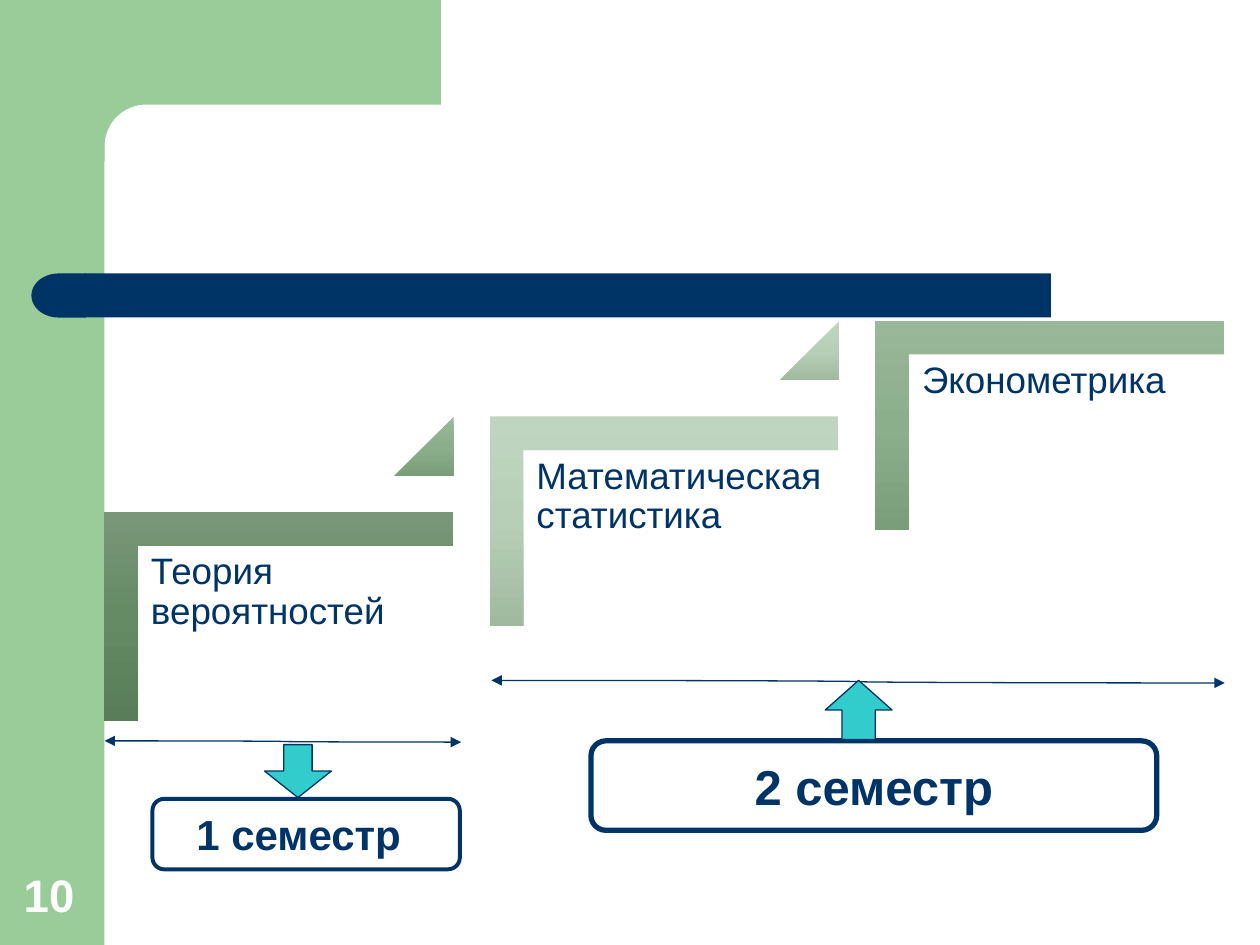
from math import cos, pi, sin

from lxml import etree
from pptx import Presentation
from pptx.dml.color import RGBColor
from pptx.enum.shapes import MSO_CONNECTOR, MSO_SHAPE
from pptx.enum.text import MSO_ANCHOR, PP_ALIGN
from pptx.oxml.ns import qn
from pptx.util import Inches, Pt

RECT, ROUND = MSO_SHAPE.RECTANGLE, MSO_SHAPE.ROUNDED_RECTANGLE
DELAY, CORNER = MSO_SHAPE.FLOWCHART_DELAY, MSO_SHAPE.CORNER
TRIANGLE = MSO_SHAPE.ISOSCELES_TRIANGLE
UP, DOWN = MSO_SHAPE.UP_ARROW, MSO_SHAPE.DOWN_ARROW
CURVE = MSO_CONNECTOR.CURVE
TOP, MIDDLE, BOTTOM = MSO_ANCHOR.TOP, MSO_ANCHOR.MIDDLE, MSO_ANCHOR.BOTTOM
LEFT, CENTER = PP_ALIGN.LEFT, PP_ALIGN.CENTER

NAVY, GREEN, TEAL, WHITE = "003366", "99CC99", "33CCCC", "FFFFFF"
DARK = ("799679", "648B64", "587D58")
MEDIUM = ("99B799", "8BAF8B", "799E79")
LIGHT = ("C0D5C0", "B6CFB6", "A0BAA0")

# Step caption, gradient of its corner, gradient of the triangle after it
STEPS = [
    ("Теория вероятностей", DARK, MEDIUM),
    ("Математическая статистика", LIGHT, LIGHT),
    ("Эконометрика", MEDIUM, None),
]
STEP_X, STEP_Y = 3.06, -0.76


def rgb(value):
    return RGBColor.from_string(value)


def paint(sp, fill, line=None, width=0.75):
    """Solid fill for a hex string, downward gradient for a tuple of them."""
    sp.shadow.inherit = False
    if isinstance(fill, str):
        sp.fill.solid()
        sp.fill.fore_color.rgb = rgb(fill)
    else:
        sp.fill.gradient()
        sp.fill.gradient_angle = 270
        grad = sp._element.spPr.find(qn("a:gradFill"))
        grad.set("rotWithShape", "0")
        stops = grad.find(qn("a:gsLst"))
        for stop in list(stops):
            stops.remove(stop)
        for i, value in enumerate(fill):
            stop = etree.SubElement(stops, qn("a:gs"), pos=str(i * 50000))
            etree.SubElement(stop, qn("a:srgbClr"), val=value)
    if line:
        sp.line.color.rgb = rgb(line)
        sp.line.width = Pt(width)
    else:
        sp.line.fill.background()


def add_shape(s, kind, x, y, w, h, fill, adj=(), rotation=0, **line):
    sp = s.shapes.add_shape(kind, Inches(x), Inches(y), Inches(w), Inches(h))
    for i, value in enumerate(adj):
        sp.adjustments[i] = value
    sp.rotation = rotation
    paint(sp, fill, **line)
    return sp


def set_text(sp, text, size, color=NAVY, bold=False, align=LEFT, anchor=TOP,
             spacing=None):
    tf = sp.text_frame
    tf.word_wrap = True
    tf.vertical_anchor = anchor
    p = tf.paragraphs[0]
    p.alignment = align
    p.line_spacing = spacing
    r = p.add_run()
    r.text = text
    r.font.name, r.font.size, r.font.bold = "Arial", Pt(size), bold
    r.font.color.rgb = rgb(color)


def add_text(s, x, y, w, h, text, size, **fmt):
    sp = s.shapes.add_textbox(Inches(x), Inches(y), Inches(w), Inches(h))
    set_text(sp, text, size, **fmt)
    return sp


def add_span(s, x1, y1, x2, y2):
    """Thin double-headed connector."""
    c = s.shapes.add_connector(CURVE, Inches(x1), Inches(y1), Inches(x2), Inches(y2))
    c.line.color.rgb = rgb(NAVY)
    c.line.width = Pt(0.75)
    ln = c.line._get_or_add_ln()
    for end in ("a:headEnd", "a:tailEnd"):
        etree.SubElement(ln, qn(end), type="triangle")
    etree.SubElement(c._element.spPr, qn("a:effectLst"))


def add_frame(s):
    """Green side band with its rounded inner corner, and the navy bar."""
    add_shape(s, RECT, 0, 0, 0.83, 7.5, GREEN)
    center, radius, parts = 1.16, 0.33, 16
    angles = [pi / 2 * i / parts for i in range(parts + 1)]
    arc = [(center - radius * sin(a), center - radius * cos(a)) for a in angles]
    points = [(3.5, 0), (3.5, 0.83), *arc, (0.83, 1.28), (0.5, 1.28), (0.5, 0)]
    points = [(Inches(x), Inches(y)) for x, y in points]
    builder = s.shapes.build_freeform(*points[0])
    builder.add_line_segments(points[1:], close=True)
    paint(builder.convert_to_shape(), GREEN)

    add_shape(s, RECT, 0.67, 2.17, 7.67, 0.35, NAVY)
    cap = add_shape(s, DELAY, 0.25, 2.17, 0.43, 0.35, NAVY)
    cap._element.spPr.find(qn("a:xfrm")).set("flipH", "1")


def add_steps(s):
    for i, (text, corner, triangle) in enumerate(STEPS):
        dx, dy = i * STEP_X, i * STEP_Y
        add_shape(s, CORNER, 1.38 + dx, 3.51 + dy, 1.66, 2.77, corner,
                  adj=(0.161, 0.161), rotation=90)
        add_text(s, 1.1 + dx, 4.34 + dy, 2.5, 2.19, text, 21, spacing=0.9)
        if triangle:
            add_shape(s, TRIANGLE, 3.13 + dx, 3.31 + dy, 0.47, 0.47, triangle, adj=(1,))


def add_semesters(s):
    add_span(s, 0.83, 5.88, 3.66, 5.89)
    add_span(s, 3.9, 5.4, 9.72, 5.42)
    add_shape(s, ROUND, 1.21, 6.34, 2.44, 0.56, WHITE, line=NAVY, width=2.25)
    add_text(s, 1.46, 6.37, 1.97, 0.5, "1 семестр", 24, bold=True, anchor=MIDDLE)
    second = add_shape(s, ROUND, 4.69, 5.88, 4.49, 0.71, WHITE, line=NAVY, width=3)
    set_text(second, "2 семестр", 28, bold=True, align=CENTER, anchor=MIDDLE)
    add_shape(s, UP, 6.55, 5.4, 0.53, 0.47, TEAL, line=NAVY)
    add_shape(s, DOWN, 2.1, 5.91, 0.53, 0.42, TEAL, adj=(0.425, 0.5), line=NAVY)


def main():
    prs = Presentation()
    prs.slide_width, prs.slide_height = Inches(10), Inches(7.5)
    s = prs.slides.add_slide(prs.slide_layouts[6])
    add_frame(s)
    add_text(s, 0.09, 6.83, 0.64, 0.53, "10", 26, color=WHITE, bold=True, anchor=BOTTOM)
    add_steps(s)
    add_semesters(s)
    prs.save("out.pptx")


if __name__ == "__main__":
    main()
